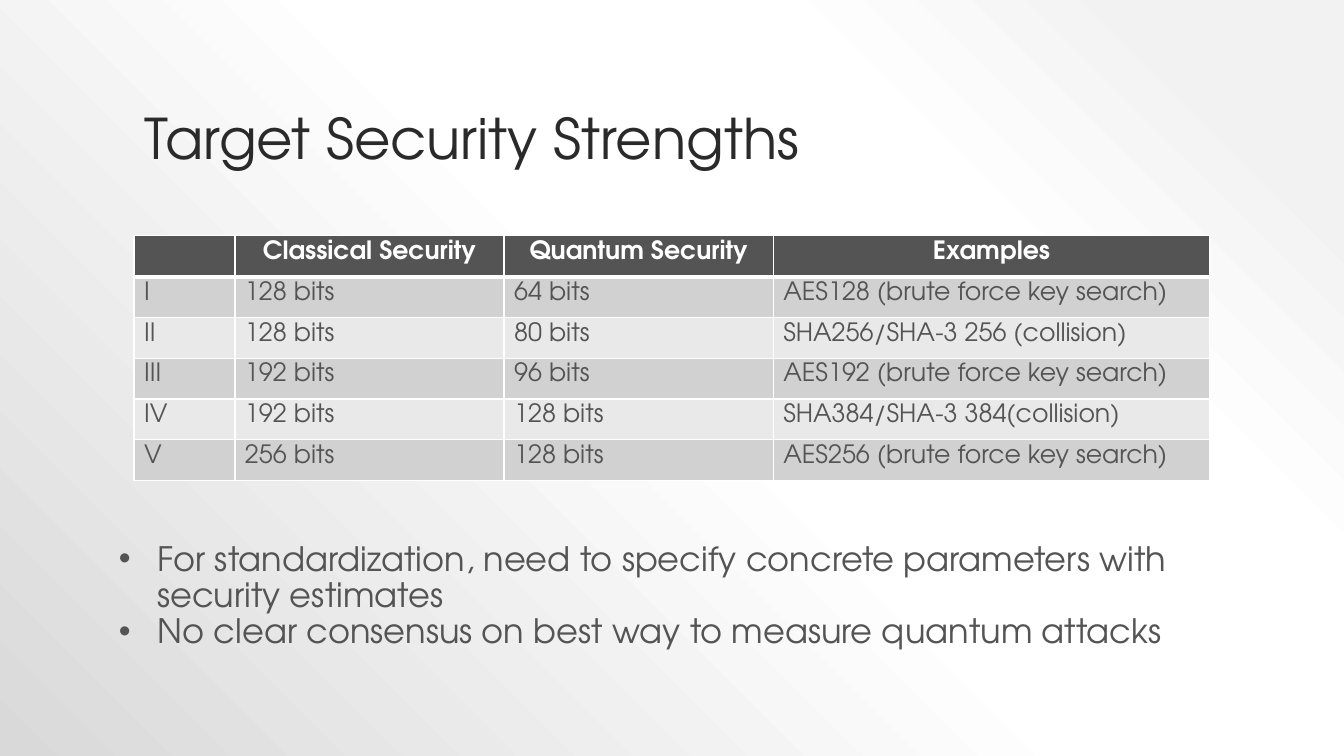
from lxml.etree import SubElement
from pptx import Presentation
from pptx.dml.color import RGBColor
from pptx.enum.text import MSO_ANCHOR, MSO_AUTO_SIZE, PP_ALIGN
from pptx.oxml import parse_xml
from pptx.oxml.ns import nsdecls, qn
from pptx.util import Inches, Pt

FONT = "TeX Gyre Adventor"
TITLE_INK = "2A2A2A"
INK = "545454"
WHITE = "FFFFFF"
BANDS = ("D1D1D1", "E9E9E9")
BACKGROUND_STOPS = ((10, "F2F2F2"), (28, WHITE), (48, WHITE), (100, "D9D9D9"))
COLUMN_WIDTHS = (1, 2.67, 2.67, 4.33)
STRENGTHS = (
    ("", "Classical Security", "Quantum Security", "Examples"),
    ("I", "128 bits", "64 bits", "AES128 (brute force key search)"),
    ("II", "128 bits", "80 bits", "SHA256/SHA-3 256 (collision)"),
    ("III", "192 bits", "96 bits", "AES192 (brute force key search)"),
    ("IV", "192 bits", "128 bits", "SHA384/SHA-3 384(collision)"),
    ("V", "256 bits", "128 bits", "AES256 (brute force key search)"),
)
POINTS = (
    "For standardization, need to specify concrete parameters with security estimates",
    "No clear consensus on best way to measure quantum attacks",
)


def color(value):
    return RGBColor.from_string(value)


def add_span(para, text, size, ink, bold=False):
    span = para.add_run()
    span.text = text
    span.font.name = FONT
    span.font.size = Pt(size)
    span.font.bold = bold
    span.font.color.rgb = color(ink)


def place(shape, box):
    shape.left, shape.top, shape.width, shape.height = map(Inches, box)


def paint_background(page):
    stops = "".join(
        f'<a:gs pos="{position * 1000}"><a:srgbClr val="{value}"/></a:gs>'
        for position, value in BACKGROUND_STOPS
    )
    background = parse_xml(
        f'<p:bg {nsdecls("p", "a")}><p:bgPr><a:gradFill rotWithShape="1">'
        f'<a:gsLst>{stops}</a:gsLst><a:path path="circle">'
        '<a:fillToRect l="100000" b="100000"/></a:path></a:gradFill>'
        '<a:effectLst/></p:bgPr></p:bg>'
    )
    page.element.cSld.insert(0, background)


def add_title(page, box):
    title = page.shapes.title
    place(title, box)
    frame = title.text_frame
    frame.vertical_anchor = MSO_ANCHOR.BOTTOM
    para = frame.paragraphs[0]
    para.alignment = PP_ALIGN.LEFT
    para.line_spacing = 0.9
    add_span(para, "Target Security Strengths", 40, TITLE_INK)


def border_cell(cell, top, bottom):
    properties = cell._tc.get_or_add_tcPr()
    edges = (("lnL", 1), ("lnR", 1), ("lnT", top), ("lnB", bottom))
    for position, (edge, width) in enumerate(edges):
        line = parse_xml(
            f'<a:{edge} {nsdecls("a")} w="{Pt(width)}"><a:solidFill>'
            f'<a:srgbClr val="{WHITE}"/></a:solidFill></a:{edge}>'
        )
        properties.insert(position, line)


def add_strengths(page, box):
    table = page.shapes.add_table(
        len(STRENGTHS), len(COLUMN_WIDTHS), *map(Inches, box)
    ).table
    for column, width in zip(table.columns, COLUMN_WIDTHS):
        column.width = Inches(width)
    for row_index, values in enumerate(STRENGTHS):
        header = row_index == 0
        fill = INK if header else BANDS[(row_index - 1) % 2]
        for column_index, value in enumerate(values):
            cell = table.cell(row_index, column_index)
            cell.margin_top = cell.margin_bottom = Inches(0.05)
            cell.fill.solid()
            cell.fill.fore_color.rgb = color(fill)
            border_cell(cell, 3 if row_index == 1 else 1, 3 if header else 1)
            para = cell.text_frame.paragraphs[0]
            para.alignment = PP_ALIGN.CENTER if header else PP_ALIGN.LEFT
            if value:
                add_span(para, value, 18, WHITE if header else INK, header)


def add_points(page, box):
    body = page.placeholders[1]
    place(body, box)
    frame = body.text_frame
    frame.word_wrap = True
    frame.auto_size = MSO_AUTO_SIZE.SHAPE_TO_FIT_TEXT
    frame.vertical_anchor = MSO_ANCHOR.TOP
    for index, text in enumerate(POINTS):
        para = frame.add_paragraph() if index else frame.paragraphs[0]
        para.line_spacing = 0.9
        para.space_before = Pt(0)
        properties = para._p.get_or_add_pPr()
        properties.set("marL", str(Inches(0.38)))
        properties.set("indent", str(Inches(-0.38)))
        SubElement(properties, qn("a:buFont"), typeface="Arial")
        SubElement(properties, qn("a:buChar"), char="•")
        add_span(para, text, 24, INK)


def build_strengths_slide(deck):
    page = deck.slides.add_slide(deck.slide_layouts[1])
    paint_background(page)
    add_title(page, (1.33, 0.3, 10.67, 1.45))
    add_strengths(page, (1.33, 2.34, 10.67, 2.43))
    add_points(page, (1.08, 5.33, 11.5, 1.56))


def main():
    deck = Presentation()
    deck.slide_width = Inches(13.33)
    deck.slide_height = Inches(7.5)
    build_strengths_slide(deck)
    deck.save("out.pptx")


if __name__ == "__main__":
    main()
